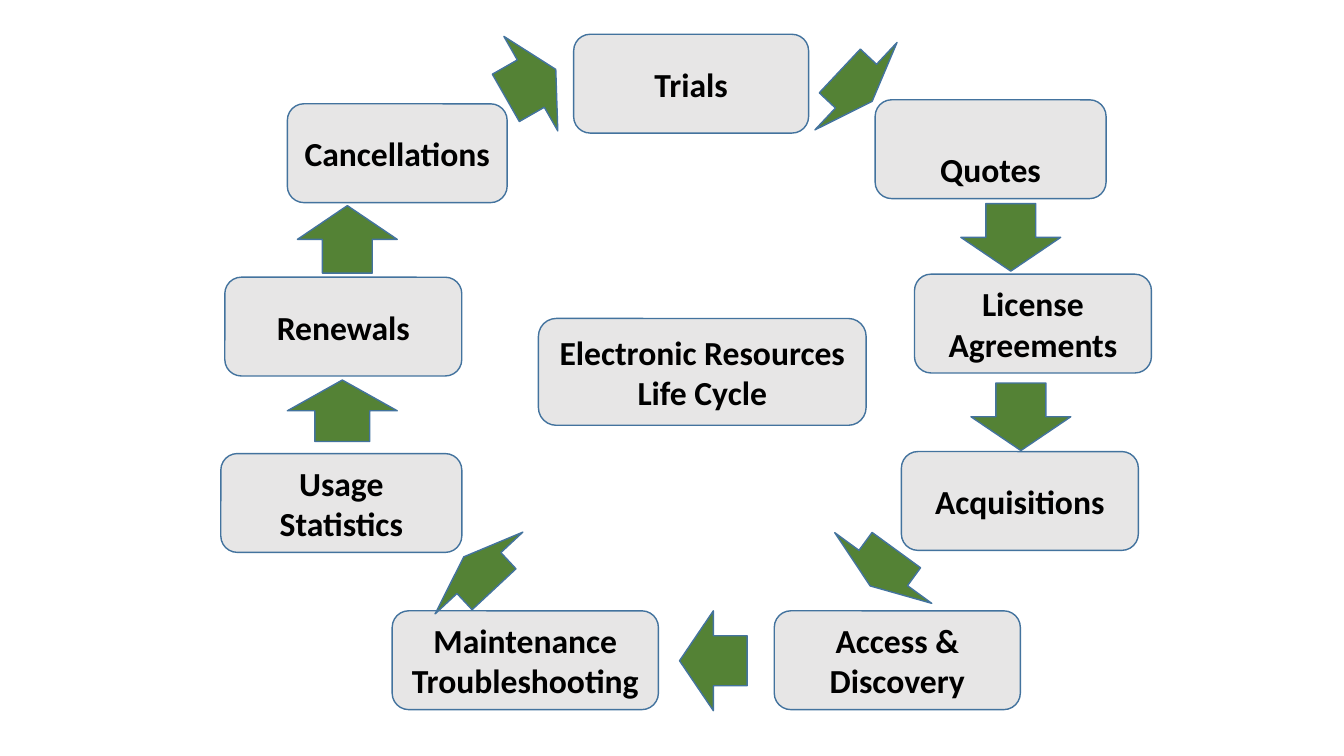
from pptx import Presentation
from pptx.dml.color import RGBColor
from pptx.enum import shapes, text
from pptx.util import Inches, Pt

STAGE_HEIGHT = 0.98
STAGES = [
    ("Trials", 5.69, 0.34, 2.33),
    ("Quotes", 8.68, 0.99, 2.29),
    ("License Agreements", 9.07, 2.72, 2.35),
    ("Acquisitions", 8.94, 4.48, 2.35),
    ("Access & Discovery", 7.68, 6.06, 2.44),
    ("Maintenance Troubleshooting", 3.89, 6.06, 2.64),
    ("Usage Statistics", 2.19, 4.5, 2.39),
    ("Renewals", 2.23, 2.75, 2.35),
    ("Cancellations", 2.85, 1.03, 2.18),
]
TOP_INSETS = {"Quotes": 0.45}
CYCLE_NAME = ("Electronic Resources Life Cycle", 5.34, 3.16, 3.25, 1.06)

DIAGONAL = (0.44, 1.19)
STRAIGHT = (0.67, 0.99)
ARROWS = [
    (8.27, 0.26, DIAGONAL, 43.2),
    (9.69, 1.86, STRAIGHT, 90),
    (9.79, 3.64, STRAIGHT, 90),
    (8.54, 5.04, DIAGONAL, 126.1),
    (6.74, 6.06, STRAIGHT, 180),
    (4.53, 5.09, DIAGONAL, 227),
    (3.09, 3.53, (0.61, 1.09), 270),
    (3.11, 1.88, STRAIGHT, 270),
    (4.98, 0.29, (0.57, 1.08), 330.3),
]


def color(value):
    return RGBColor.from_string(value)


def add_outlined(slide, kind, left, top, width, height, fill):
    outlined = slide.shapes.add_shape(
        kind, Inches(left), Inches(top), Inches(width), Inches(height))
    outlined.shadow.inherit = False
    outlined.fill.solid()
    outlined.fill.fore_color.rgb = color(fill)
    outlined.line.color.rgb = color("43739E")
    outlined.line.width = Pt(1)
    return outlined


def add_stage(slide, label, left, top, width, height):
    stage = add_outlined(
        slide, shapes.MSO_SHAPE.FLOWCHART_ALTERNATE_PROCESS,
        left, top, width, height, "E7E6E6")
    frame = stage.text_frame
    frame.word_wrap = True
    frame.vertical_anchor = text.MSO_ANCHOR.MIDDLE
    frame.margin_top = Inches(TOP_INSETS.get(label, 0.05))
    frame.text = label
    paragraph = frame.paragraphs[0]
    paragraph.alignment = text.PP_ALIGN.CENTER
    font = paragraph.runs[0].font
    font.name = "Calibri"
    font.size = Pt(24)
    font.bold = True
    font.color.rgb = color("000000")


def main():
    deck = Presentation()
    deck.slide_width = Inches(13.33)
    deck.slide_height = Inches(7.5)
    slide = deck.slides.add_slide(deck.slide_layouts[6])

    for label, left, top, width in STAGES:
        add_stage(slide, label, left, top, width, STAGE_HEIGHT)
    for left, top, (width, height), angle in ARROWS:
        arrow = add_outlined(
            slide, shapes.MSO_SHAPE.RIGHT_ARROW, left, top, width, height, "548235")
        arrow.rotation = angle
    add_stage(slide, *CYCLE_NAME)

    deck.save("out.pptx")


if __name__ == "__main__":
    main()
